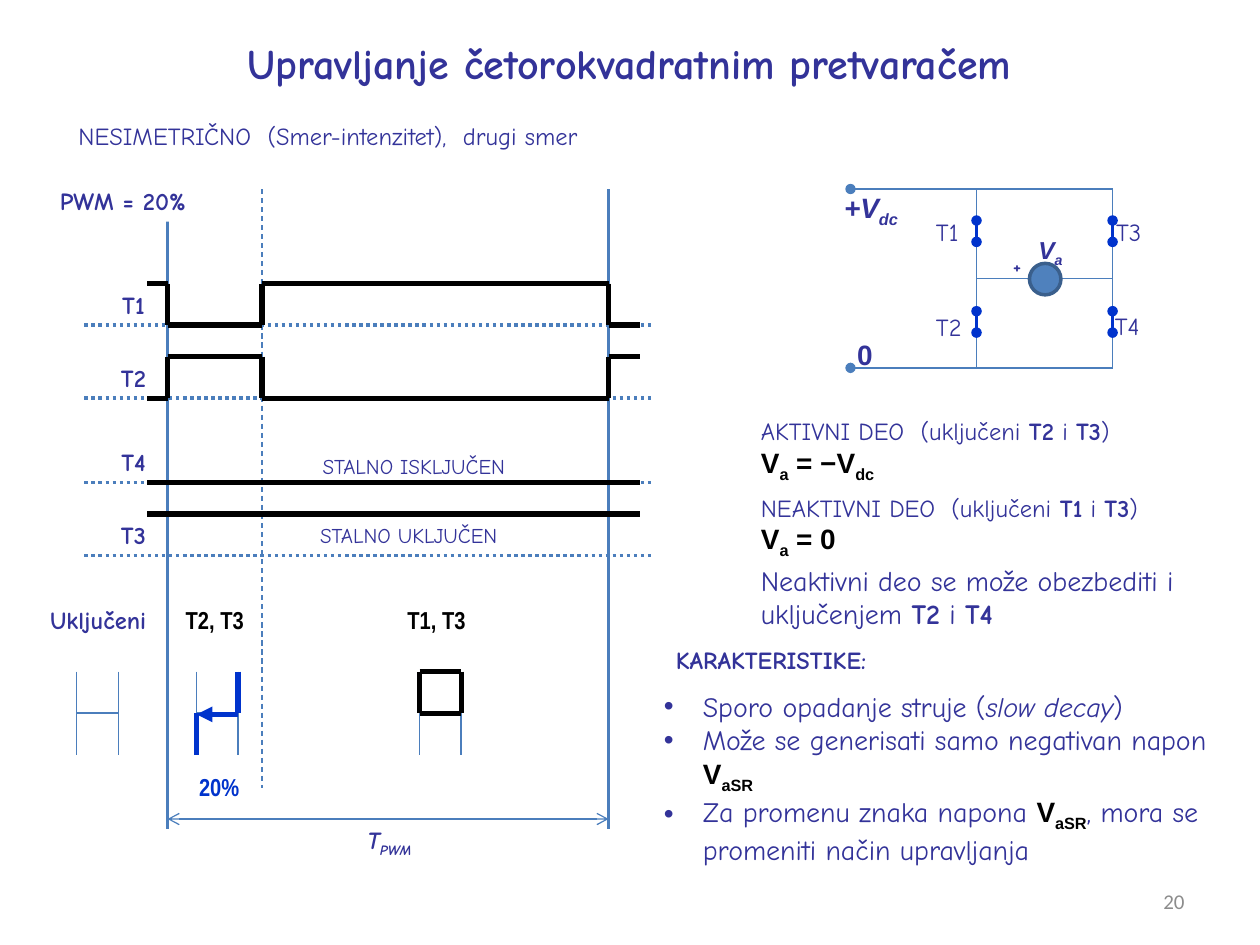
from dataclasses import dataclass, replace

from lxml import etree
from pptx import Presentation
from pptx.dml.color import RGBColor
from pptx.enum.dml import MSO_LINE
from pptx.enum.shapes import MSO_CONNECTOR, MSO_SHAPE
from pptx.enum.text import MSO_ANCHOR, MSO_AUTO_SIZE, PP_ALIGN
from pptx.oxml.ns import qn
from pptx.util import Inches, Pt

LEFT, CENTER, RIGHT = PP_ALIGN.LEFT, PP_ALIGN.CENTER, PP_ALIGN.RIGHT
STRAIGHT, OVAL, RECTANGLE = MSO_CONNECTOR.STRAIGHT, MSO_SHAPE.OVAL, MSO_SHAPE.RECTANGLE
DOTTED, DASHED = MSO_LINE.ROUND_DOT, MSO_LINE.DASH
MIDDLE, GROW, FIXED = MSO_ANCHOR.MIDDLE, MSO_AUTO_SIZE.SHAPE_TO_FIT_TEXT, MSO_AUTO_SIZE.NONE
NAVY, BLUE, STEEL, BLACK, WHITE = "333399", "0033CC", "4B7EBC", "000000", "FFFFFF"


@dataclass(frozen=True)
class Style:
    """Character formatting of a span."""
    font: str = "Comic Neue"
    size: float = 14
    color: str = NAVY
    bold: bool = False
    italic: bool = False
    lowered: bool = False


BODY = Style()
STRONG = Style(bold=True)
LARGE = Style(size=16)
LARGE_STRONG = Style(size=16, bold=True)
SMALL = Style(size=12)
FORMULA = Style("Arial", 16, BLACK, bold=True)
TERMINAL = replace(FORMULA, color=NAVY)
NARROW = Style("Arial Narrow", 14, BLACK, bold=True)


def rgb(color):
    """Turn a hex string into a colour."""
    return RGBColor.from_string(color)


def sub(style):
    """Give the subscript form of a style."""
    return replace(style, lowered=True)


def apply_style(font, style):
    """Set a font to a style."""
    font.name, font.size = style.font, Pt(style.size)
    font.bold, font.italic = style.bold, style.italic
    font.color.rgb = rgb(style.color)


def write(page, box, paragraphs, align=CENTER, wrap=False, grow=True, fill=None, bullet=None):
    """Place paragraphs, each a list of (text, style) spans, in a box."""
    area = [Inches(value) for value in box]
    if fill:
        shape = page.shapes.add_shape(RECTANGLE, *area)
        shape.shadow.inherit = False
        shape.fill.solid()
        shape.fill.fore_color.rgb = rgb(fill)
        shape.line.fill.background()
    else:
        shape = page.shapes.add_textbox(*area)
    frame = shape.text_frame
    frame.word_wrap = wrap
    frame.auto_size = GROW if grow else FIXED
    for index, spans in enumerate(paragraphs):
        para = frame.add_paragraph() if index else frame.paragraphs[0]
        para.alignment = align
        if bullet:
            properties = para._p.get_or_add_pPr()
            properties.set("marL", str(Inches(0.31)))
            properties.set("indent", str(-Inches(0.31)))
            etree.SubElement(properties, qn("a:buFont")).set("typeface", "Arial")
            etree.SubElement(properties, qn("a:buChar")).set("char", bullet)
        for text, style in spans:
            span = para.add_run()
            span.text = text
            apply_style(para.font if len(spans) == 1 else span.font, style)
            if style.lowered:
                span._r.get_or_add_rPr().set("baseline", "-25000")
    return frame


def draw_line(page, start, end, color=STEEL, width=0.75, dash=None, head=None, tail=None):
    """Draw a straight line with optional dash and ends."""
    points = [Inches(value) for value in (*start, *end)]
    connector = page.shapes.add_connector(STRAIGHT, *points)
    line = connector.line
    line.color.rgb = rgb(color)
    line.width = Pt(width)
    if dash:
        line.dash_style = dash
    for tag, kind in (("a:headEnd", head), ("a:tailEnd", tail)):
        if kind:
            etree.SubElement(line._get_or_add_ln(), qn(tag)).set("type", kind)
    etree.SubElement(connector._element.spPr, qn("a:effectLst"))


def trace(page, left, top, points, color=BLACK, width=3):
    """Join points, given relative to a corner, with straight lines."""
    places = [(left + x, top + y) for x, y in points]
    for start, end in zip(places, places[1:]):
        draw_line(page, start, end, color, width)


def add_timing(page, left, top):
    """Draw the switch signals over one period, which starts at left."""
    lead, switch, period, after = -0.16, 0.75, 3.5, 3.75
    swing = 0.33
    rows = (("T1", 0.75, "1010"), ("T2", 1.33, "0101"), ("T4", 2, "0000"), ("T3", 2.58, "1111"))
    for name, offset, levels in rows:
        base = top + offset + swing
        draw_line(page, (left - 0.66, base), (left + 3.84, base), width=0, dash=DOTTED)
    draw_line(page, (left + switch, top), (left + switch, top + 4.75), dash=DASHED)
    for edge in (0, period):
        draw_line(page, (left + edge, top), (left + edge, top + 5.08), width=1.25)
    write(page, (left - 1.04, top - 0.08, 1.37, 0.34), [[("PWM = 20%", STRONG)]], fill=WHITE)
    edges = (lead, 0, switch, period, after)
    for name, offset, levels in rows:
        points = []
        for start, end, level in zip(edges, edges[1:], levels):
            height = 0 if level == "1" else swing
            points += [(start, height), (end, height)]
        if len(set(levels)) == 1:
            points = [points[0], points[-1]]
        trace(page, left, top + offset, points)
        write(page, (left - 0.5, top + offset, 0.46, 0.34), [[(name, STRONG)]])
    write(page, (left + 0.98, top + 2.05, 1.95, 0.3), [[("STALNO ISKLJUČEN", SMALL)]])
    write(page, (left + 0.98, top + 2.6, 1.87, 0.3), [[("STALNO UKLJUČEN", SMALL)]])
    draw_line(page, (left, top + 5), (left + period, top + 5), head="arrow", tail="arrow")
    symbol = replace(STRONG, italic=True)
    write(page, (left + 1.42, top + 5, 0.72, 0.34), [[("T", symbol), ("PWM ", sub(symbol))]])


def add_bridge_icon(page, left, top, width, height):
    """Draw a small H-shaped bridge."""
    middle = top + height / 2
    for x in (left, left + width):
        draw_line(page, (x, top), (x, top + height))
    draw_line(page, (left, middle), (left + width, middle))


def add_conduction(page, left, top):
    """Show which switches conduct in each part of the period."""
    side, icon_top = 0.33, top + 0.58
    active, idle = left + 1.31, left + 3.08
    write(page, (left, top, 1.06, 0.34), [[("Uključeni", STRONG)]])
    write(page, (left + 1.12, top, 0.67, 0.34), [[("T2, T3", NARROW)]])
    write(page, (left + 2.88, top, 0.67, 0.34), [[("T1, T3", NARROW)]])
    for x in (left + 0.36, active, idle):
        add_bridge_icon(page, x, icon_top, side, 2 * side)
    trace(page, idle, icon_top, [(0, 0), (side, 0), (side, side), (0, side), (0, 0)])
    middle = icon_top + side + 0.01
    trace(page, active, icon_top, [(side, 0), (side, side)], BLUE)
    trace(page, active, icon_top, [(0, side), (0, 2 * side)], BLUE)
    draw_line(page, (active, middle), (active + side, middle), BLUE, 3, head="triangle")
    write(page, (left + 1.23, top + 1.33, 0.52, 0.34), [[("20%", replace(NARROW, color=BLUE))]])


def add_circuit(page, left, top):
    """Draw the four-switch bridge with its motor."""
    legs, bottom = (left + 1, left + 2.08), top + 1.42
    for y in (top, bottom):
        draw_line(page, (left, y), (legs[1], y), head="oval")
    for x in legs:
        draw_line(page, (x, top), (x, bottom))
    draw_line(page, (legs[0], top + 0.71), (legs[1], top + 0.71))
    motor = page.shapes.add_shape(OVAL, Inches(left + 1.42), Inches(top + 0.59), Inches(0.25), Inches(0.25))
    motor.shadow.inherit = False
    motor.fill.solid()
    motor.fill.fore_color.rgb = rgb("4F81BD")
    motor.line.color.rgb = rgb("3A5F8C")
    motor.line.width = Pt(2)
    labels = (("T1", 0.58, 0.17, BODY), ("T2", 0.58, 0.93, BODY), ("T3", 2.01, 0.17, BODY),
              ("T4", 2, 0.92, BODY), ("+", 1.19, 0.47, Style(size=11, bold=True)))
    for name, x, y, style in labels:
        write(page, (left + x, top + y, 0.58, 0.41), [[(name, style)]], LEFT, wrap=True, grow=False)
    supply = replace(TERMINAL, italic=True)
    output = replace(supply, size=14)
    write(page, (left - 0.17, top - 0.04, 0.7, 0.37), [[("+V", supply), ("dc ", sub(supply))]])
    write(page, (left - 0.05, top + 1.13, 0.33, 0.37), [[("0", TERMINAL)]])
    write(page, (left + 1.38, top + 0.29, 0.45, 0.34),
          [[("V", output), ("a", sub(output)), (" ", sub(supply))]])
    for x in legs:
        for y in (top + 0.25, top + 0.97):
            draw_line(page, (x, y), (x, y + 0.17), BLUE, 2, head="oval", tail="oval")


def add_states(page, left, top):
    """Describe the active and inactive parts of the period."""
    voltage = [("V", FORMULA), ("a", sub(FORMULA))]
    states = (("AKTIVNI DEO  (uključeni ", "T2", [(" = −V", FORMULA), ("dc", sub(FORMULA))], 3.39),
              ("NEAKTIVNI DEO  (uključeni ", "T1", [(" = 0", FORMULA)], 3.68))
    for index, (title, switch, value, width) in enumerate(states):
        heading = [(title, BODY), (switch, STRONG), (" i ", BODY), ("T3", STRONG), (")", BODY)]
        write(page, (left, top + 0.61 * index, width, 0.61), [heading, voltage + value], LEFT)
    write(page, (left, top + 1.17, 3.84, 0.64),
          [[("Neaktivni deo se može obezbediti i", LARGE)],
           [("uključenjem ", LARGE), ("T2", LARGE_STRONG), (" i ", LARGE), ("T4", LARGE_STRONG)]], LEFT)


def add_features(page, left, top):
    """List the characteristics of this control method."""
    average = [("V", FORMULA), ("aSR", sub(FORMULA))]
    write(page, (left, top, 2.08, 0.34), [[("KARAKTERISTIKE:", STRONG)]])
    write(page, (left + 0.09, top + 0.35, 4.61, 1.45),
          [[("Sporo opadanje struje (", LARGE), ("slow decay", replace(LARGE, italic=True)), (")", LARGE)],
           [("Može se generisati samo negativan napon ", LARGE), *average],
           [("Za promenu znaka napona ", LARGE), *average,
            (", mora se promeniti način upravljanja", LARGE)]], LEFT, wrap=True, bullet="•")


def main():
    """Build and save the deck."""
    deck = Presentation()
    deck.slide_width, deck.slide_height = Inches(10), Inches(7.5)
    page = deck.slides.add_slide(deck.slide_layouts[6])
    write(page, (1.37, 0.25, 7.25, 0.5),
          [[("Upravljanje četorokvadratnim pretvaračem", Style(size=24, bold=True))]])
    write(page, (0.25, 0.91, 4.71, 0.34), [[("NESIMETRIČNO  (Smer-intenzitet),  drugi smer", BODY)]])
    add_timing(page, 1.33, 1.5)
    add_conduction(page, 0.25, 4.75)
    add_circuit(page, 6.75, 1.5)
    add_states(page, 5.94, 3.25)
    add_features(page, 5.08, 5.07)
    number = write(page, (7.17, 6.95, 2.33, 0.4), [[("20", Style("Calibri", 12, "8C8C8C"))]],
                   RIGHT, wrap=True, grow=False)
    number.vertical_anchor = MIDDLE
    deck.save("out.pptx")


if __name__ == "__main__":
    main()
